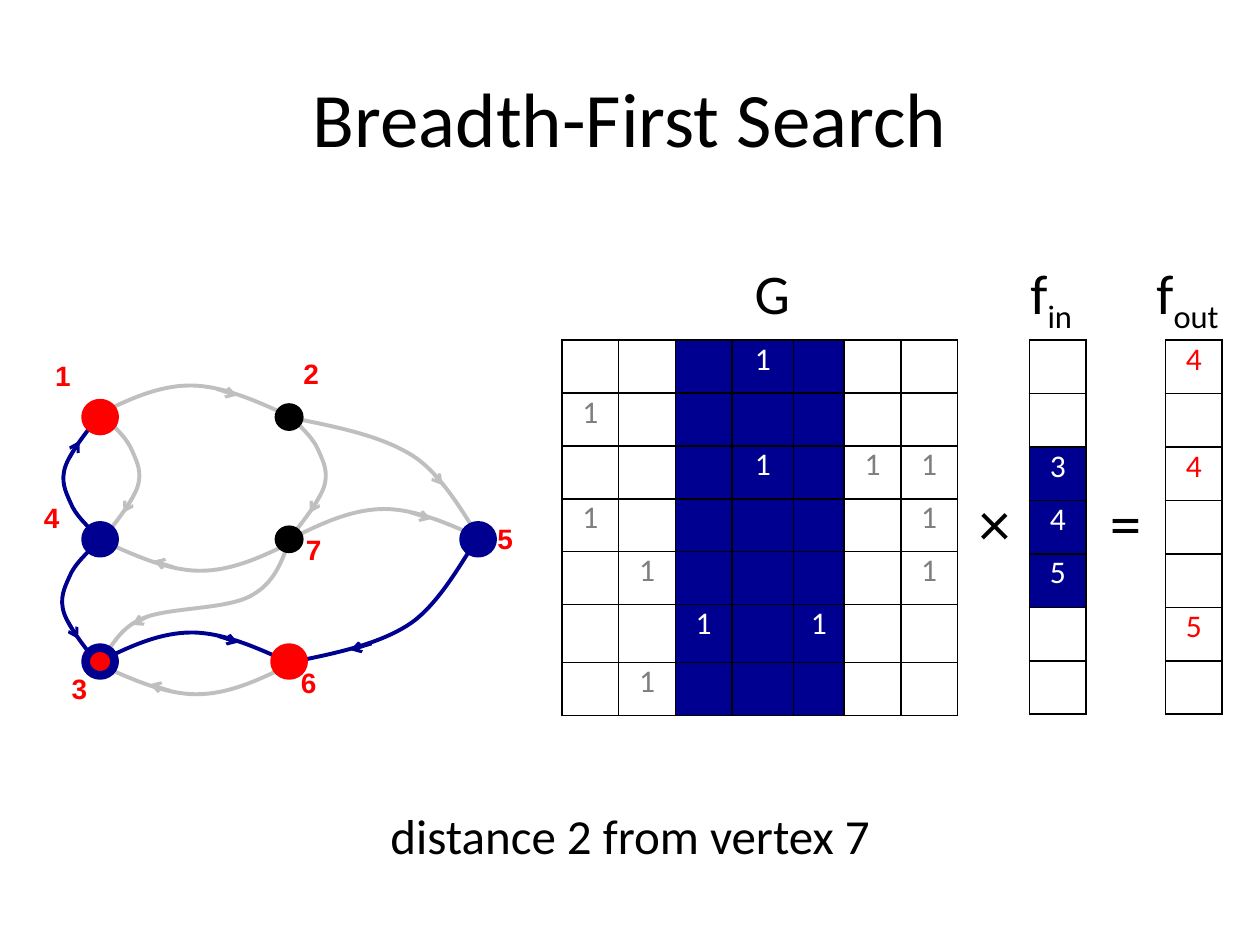
from lxml import etree
from pptx import Presentation
from pptx.dml.color import RGBColor
from pptx.enum.shapes import MSO_CONNECTOR, MSO_SHAPE
from pptx.enum.text import MSO_ANCHOR, MSO_AUTO_SIZE, PP_ALIGN
from pptx.oxml import parse_xml
from pptx.oxml.ns import nsdecls, qn
from pptx.util import Inches, Pt

color = RGBColor.from_string
NAVY, RED, GRAY, SILVER = "000090", "FF0000", "7F7F7F", "BFBFBF"
BLACK, WHITE = "000000", "FFFFFF"


def add_run(paragraph, text, size, hex_color=BLACK, **formats):
    run = paragraph.add_run()
    run.text = text
    for name, value in {"name": "Calibri", "size": Pt(size), **formats}.items():
        setattr(run.font, name, value)
    run.font.color.rgb = color(hex_color)
    return run


def add_text_box(shapes, box, text, size, hex_color=BLACK, wrap=False, **formats):
    """Add a one-line text box and return its paragraph."""
    frame = shapes.add_textbox(*map(Inches, box)).text_frame
    frame.word_wrap = wrap
    frame.auto_size = MSO_AUTO_SIZE.NONE if wrap else MSO_AUTO_SIZE.SHAPE_TO_FIT_TEXT
    frame.vertical_anchor = MSO_ANCHOR.MIDDLE if wrap else MSO_ANCHOR.TOP
    paragraph = frame.paragraphs[0]
    add_run(paragraph, text, size, hex_color, **formats)
    return paragraph


presentation = Presentation()
presentation.slide_width, presentation.slide_height = Inches(10), Inches(7.5)
slide = presentation.slides.add_slide(presentation.slide_layouts[6])

title = add_text_box(slide.shapes, (0.5, 0.3, 9, 1.25), "Breadth-First Search", 44, wrap=True)
title.alignment = PP_ALIGN.CENTER

# Graph edges: Bezier points and arrow as offsets from the edge's start
side = [(0, 0), (0.09, 0.09), (0.18, 0.17), (0.22, 0.27), (0.26, 0.36),
        (0.3, 0.44), (0.26, 0.56), (0.22, 0.67), (0.11, 0.81), (0, 0.95)]
side_arrow = [(0.23, 0.62), (0.15, 0.76)]
arc = [(0, 0), (0.24, -0.12), (0.48, -0.23), (0.73, -0.23),
       (0.98, -0.23), (1.25, -0.11), (1.51, 0.01)]
arc_arrow = [(0.94, -0.2), (1.1, -0.15)]
sweep = [(0, 0), (-0.09, 0.12), (-0.29, 0.51), (-0.54, 0.67),
         (-0.79, 0.83), (-1.14, 0.9), (-1.49, 0.97)]
winding = [(0, 0), (-0.06, 0.17), (-0.12, 0.35), (-0.31, 0.45), (-0.51, 0.56),
           (-0.97, 0.54), (-1.17, 0.63), (-1.37, 0.71), (-1.44, 0.91), (-1.5, 0.96)]
edges = [  # start x, start y, flip x, flip y, curve, arrow, color
    (0.78, 4.26, -1, -1, side, side_arrow, NAVY),
    (0.83, 3.31, 1, 1, side, side_arrow, SILVER),
    (0.78, 3.29, 1, 1, arc, arc_arrow, SILVER),
    (2.3, 4.28, 1, 1, winding, [(-1.1, 0.6), (-1.25, 0.68)], SILVER),
    (2.32, 4.27, 1, 1, arc, arc_arrow, SILVER),
    (0.79, 5.25, 1, 1, arc, arc_arrow, NAVY),
    (2.29, 5.28, -1, -1, arc, arc_arrow, SILVER),
    (2.32, 4.3, -1, -1, arc, arc_arrow, SILVER),
    (0.77, 4.31, -1, 1, side, side_arrow, NAVY),
    (2.31, 3.31, 1, 1, side, side_arrow, SILVER),
    (3.78, 4.29, 1, 1, sweep, [(-0.83, 0.82), (-1, 0.87)], NAVY),
    (3.82, 4.29, 1, -1, sweep, [(-0.41, 0.57), (-0.31, 0.44)], SILVER),
]
graph = slide.shapes.add_group_shape().shapes
for x, y, flip_x, flip_y, curve, arrow, hex_color in edges:
    points, ends = [[(Inches(x + flip_x * dx), Inches(y + flip_y * dy)) for dx, dy in offsets]
                    for offsets in (curve, arrow)]
    builder = graph.build_freeform(*points[0])
    builder.add_line_segments(points[1:], close=False)
    edge = builder.convert_to_shape()
    edge.shadow.inherit = False
    edge.fill.background()
    # Turn every three line points into one cubic Bezier segment
    segments = list(edge._element.iter(qn("a:lnTo")))
    outline = segments[0].getparent()
    for first in range(0, len(segments), 3):
        bezier = etree.SubElement(outline, qn("a:cubicBezTo"))
        for segment in segments[first:first + 3]:
            bezier.append(segment[0])
            outline.remove(segment)

    head = graph.add_connector(MSO_CONNECTOR.STRAIGHT, *ends[0], *ends[1])
    for part, width in ((edge, 2.25), (head, 1.75)):
        part.line.color.rgb = color(hex_color)
        part.line.width = Pt(width)
    etree.SubElement(head.line._get_or_add_ln(), qn("a:tailEnd"), type="arrow")
    etree.SubElement(head._element.spPr, qn("a:effectLst"))

vertices = [  # column, row, fill, outline, label, label left, label top
    (0, 0, RED, RED, "1", 0.34, 2.8),
    (1, 2, RED, RED, "6", 2.29, 5.23),
    (1, 0, BLACK, None, "2", 2.31, 2.78),
    (1, 1, BLACK, None, "7", 2.33, 4.18),
    (2, 1, NAVY, NAVY, "5", 3.85, 4.09),
    (0, 1, NAVY, NAVY, "4", 0.25, 3.92),
    (0, 2, RED, NAVY, "3", 0.47, 5.28),
]
for column, row, fill, outline_color, label, left, top in vertices:
    vertex = graph.add_shape(MSO_SHAPE.OVAL, Inches(0.68 + 1.5 * column),
                             Inches(3.2 + 0.97 * row), Inches(0.23), Inches(0.22))
    vertex.shadow.inherit = False
    vertex.fill.solid()
    vertex.fill.fore_color.rgb = color(fill)
    if outline_color:
        vertex.line.color.rgb = color(outline_color)
        vertex.line.width = Pt(5)
    else:
        vertex.line.fill.background()
    add_text_box(graph, (left, top, 0.36, 0.39), label, 16, RED, name="Arial", bold=True)

# Adjacency matrix and frontier vectors; a dot is an empty cell
matrix = ["...1...", "1......", "...1.11", "1.....1", ".1....1", "..1.1..", ".1....."]
active_cells = {(row, column) for row in range(7) for column in (2, 3, 4)}
tables = [  # left, column widths, row heights, rows, navy cells, text color
    (4.46, [0.45, 0.45, 0.45, 0.49, 0.4, 0.45, 0.45], [0.42] * 5 + [0.46, 0.42],
     matrix, active_cells, GRAY),
    (8.17, [0.45], [2.97 / 7] * 7, "..345..", {(2, 0), (3, 0), (4, 0)}, BLACK),
    (9.25, [0.45], [2.97 / 7] * 7, "4.4..5.", set(), RED),
]
for left, widths, heights, rows, navy_cells, text_color in tables:
    table = slide.shapes.add_table(7, len(widths), Inches(left), Inches(2.7),
                                   Inches(sum(widths)), Inches(sum(heights))).table
    table.first_row = table.horz_banding = False
    for column, width in zip(table.columns, widths):
        column.width = Inches(width)
    for row, height in zip(table.rows, heights):
        row.height = Inches(height)
    for i, values in enumerate(rows):
        for j, value in enumerate(values):
            cell = table.cell(i, j)
            is_navy = (i, j) in navy_cells
            cell.margin_left = cell.margin_right = cell.margin_top = cell.margin_bottom = 0
            cell.fill.solid()
            cell.fill.fore_color.rgb = color(NAVY if is_navy else WHITE)
            for position, border in enumerate(("lnL", "lnR", "lnT", "lnB")):
                cell._tc.get_or_add_tcPr().insert(position, parse_xml(
                    f'<a:{border} {nsdecls("a")} w="12700"><a:solidFill>'
                    f'<a:srgbClr val="{BLACK}"/></a:solidFill></a:{border}>'))
            paragraph = cell.text_frame.paragraphs[0]
            paragraph.alignment = PP_ALIGN.CENTER
            if value != ".":
                add_run(paragraph, value, 18, WHITE if is_navy else text_color)

captions = [  # box, text, subscript, size
    ((5.89, 2, 0.49, 0.64), "G", "", 32),
    ((8.08, 2, 0.56, 0.64), "f", "in", 32),
    ((9.08, 2, 0.75, 0.64), "f", "out", 32),
    ((7.67, 3.79, 0.45, 0.71), "×", "", 36),
    ((8.71, 3.79, 0.45, 0.71), "=", "", 36),
    ((3, 6.34, 4.05, 0.57), "distance 2 from vertex 7", "", 28),
]
for box, text, subscript, size in captions:
    paragraph = add_text_box(slide.shapes, box, text, size)
    if subscript:
        run = add_run(paragraph, subscript, size)
        run._r.get_or_add_rPr().set("baseline", "-25000")

presentation.save("out.pptx")
